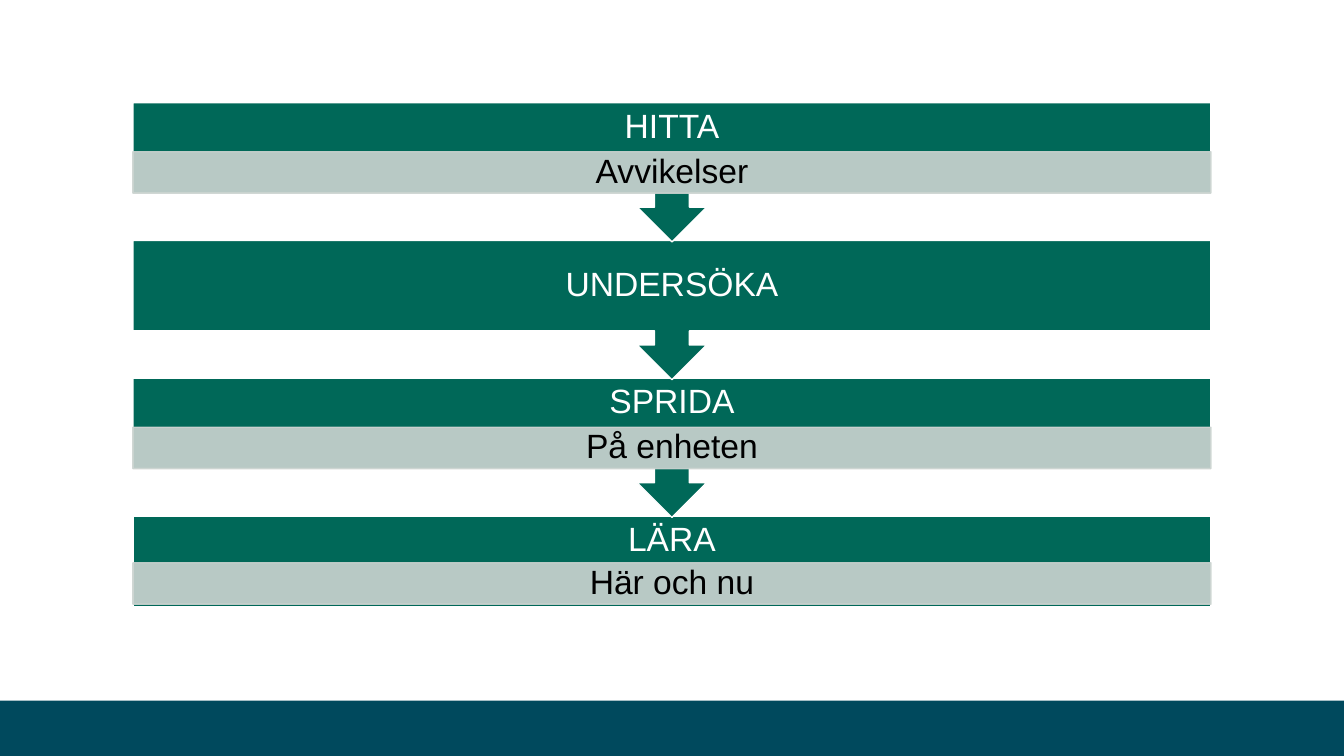
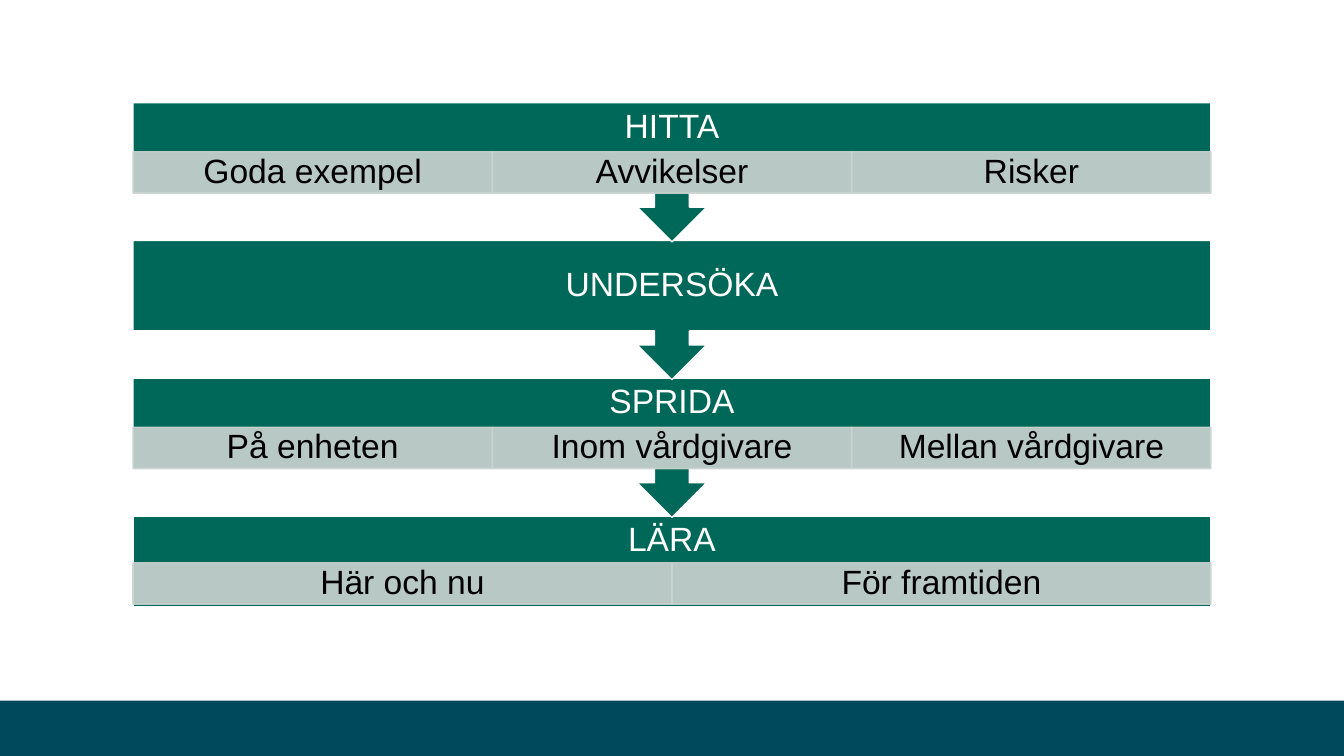
from lxml.etree import SubElement as Sub
from pptx import Presentation
from pptx.dml.color import RGBColor as RGB
from pptx.enum.shapes import MSO_SHAPE as Geo
from pptx.enum.text import MSO_ANCHOR as Anchor, PP_ALIGN as Align
from pptx.oxml.ns import qn
from pptx.util import Pt

WIDE, HIGH = 960, 540
LEFT, SPAN = 95, 770
TOP, STEP = 73.4, 98.4
BAR, CALL = 64.8, 99.4      # height of a bar without and with its arrow
CELL, DROP = 29.6, 35       # height of a cell and its offset in the bar

GREEN, GREY, BLUE = "006858", "CCD4D1", "00495D"
WHITE, BLACK = "FFFFFF", "000000"
FONT = {"name": "Arial", "size": Pt(24)}
FRAME = {"margin_left": 0, "margin_right": 0, "margin_top": 0,
         "margin_bottom": 0, "vertical_anchor": Anchor.MIDDLE,
         "word_wrap": True}
PARA = {"alignment": Align.CENTER, "line_spacing": 0.9}

FLOWS = [
    [("HITTA", ["Avvikelser"]),
     ("UNDERSÖKA", []),
     ("SPRIDA", ["På enheten"]),
     ("LÄRA", ["Här och nu"])],
    [("HITTA", ["Goda exempel", "Avvikelser", "Risker"]),
     ("UNDERSÖKA", []),
     ("SPRIDA", ["På enheten", "Inom vårdgivare", "Mellan vårdgivare"]),
     ("LÄRA", ["Här och nu", "För framtiden"])],
]


def tint(fmt, code, alpha=None):
    """Set a solid colour on a font, or a fill or line fill, with alpha in %."""
    fmt.solid()
    fmt.fore_color.rgb = RGB.from_string(code)
    if alpha:
        node = fmt.fore_color._xFill.find(qn("a:srgbClr"))
        Sub(node, qn("a:alpha"), val=str(alpha * 1000))


def apply(item, style):
    for key, value in style.items():
        setattr(item, key, value)


class Deck:
    def __init__(self):
        self.prs = Presentation()
        apply(self.prs, {"slide_width": Pt(WIDE), "slide_height": Pt(HIGH)})
        self.slide = None

    def page(self):
        self.slide = self.prs.slides.add_slide(self.prs.slide_layouts[6])

    def shape(self, geo, x, y, w, h, fill, line=None, alpha=None):
        item = self.slide.shapes.add_shape(geo, Pt(x), Pt(y), Pt(w), Pt(h))
        item.shadow.inherit = False
        tint(item.fill, fill, alpha)
        if line:
            tint(item.line.fill, line, alpha)
            item.line.width = Pt(1)
        else:
            item.line.fill.background()
        return item

    def text(self, item, words, color, below=0):
        """Write centred words, leaving room for what lies below them."""
        frame = item.text_frame
        apply(frame, {**FRAME, "margin_bottom": Pt(below)})
        para = frame.paragraphs[0]
        apply(para, PARA)
        run = para.add_run()
        run.text = words
        apply(run.font, FONT)
        tint(run.font.fill, color)

    def band(self):
        """Move one footer band to the master, so that every slide shows it."""
        node = self.shape(Geo.RECTANGLE, 0, 500.4, WIDE, 39.6, BLUE).element
        node.nvSpPr.cNvPr.set("id", "20")
        self.prs.slide_master.shapes.element.append(node)

    def stage(self, y, head, cells, last):
        geo, high = ((Geo.RECTANGLE, BAR) if last
                     else (Geo.DOWN_ARROW_CALLOUT, CALL))
        bar = self.shape(geo, LEFT, y, SPAN, high, GREEN, WHITE)
        self.text(bar, head, WHITE, BAR - DROP if cells else 0)
        drop = DROP - 1.6 if last else DROP
        for i, words in enumerate(cells):
            w = SPAN / len(cells)
            cell = self.shape(Geo.RECTANGLE, LEFT + i * w, y + drop, w, CELL,
                              GREY, GREY, 90)
            self.text(cell, words, BLACK)

    def flow(self, stages):
        """Draw from the bottom up, so that each arrow tip lies on the next bar."""
        end = len(stages) - 1
        for i in range(end, -1, -1):
            self.stage(TOP + i * STEP, *stages[i], last=i == end)


def main():
    deck = Deck()
    for i, stages in enumerate(FLOWS):
        deck.page()
        if i == 0:
            deck.band()
        deck.flow(stages)
    deck.prs.save("out.pptx")


if __name__ == "__main__":
    main()
